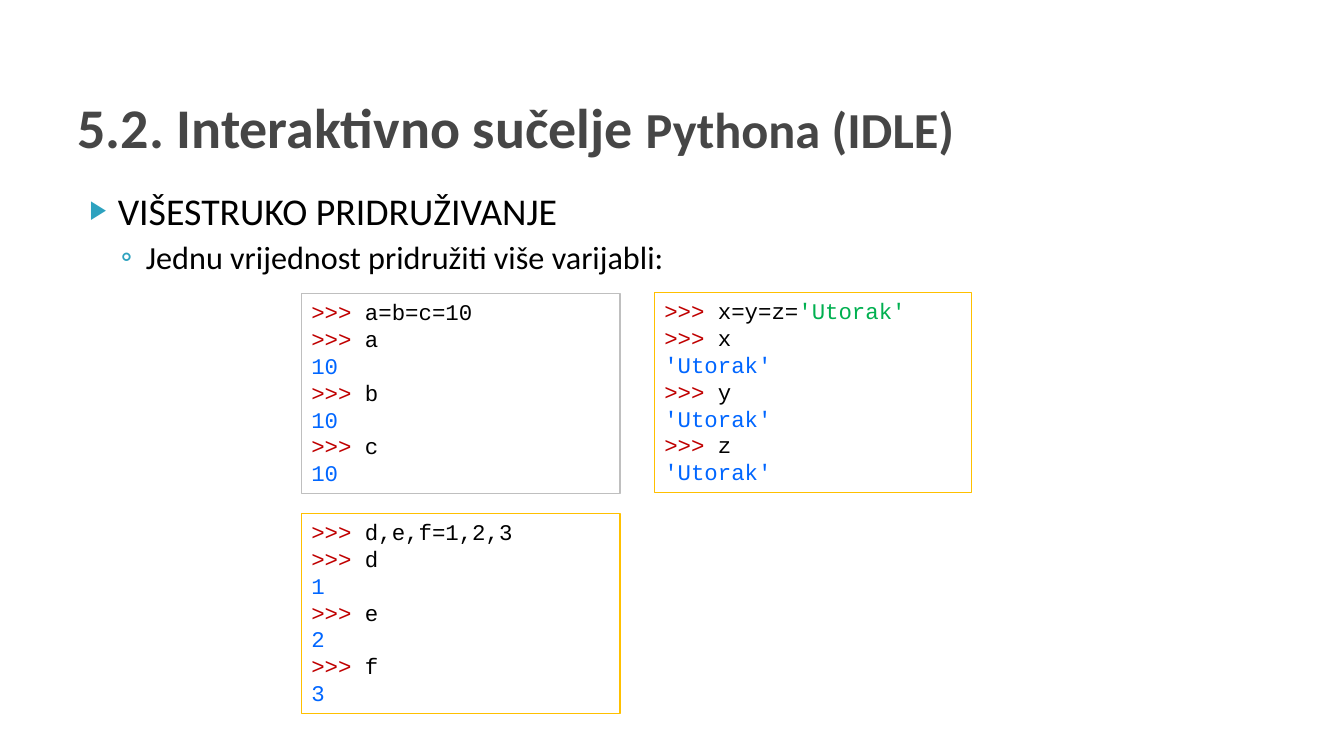
from dataclasses import dataclass

from lxml.etree import SubElement
from pptx import Presentation
from pptx.dml.color import RGBColor
from pptx.enum.shapes import MSO_SHAPE as Shape
from pptx.enum.text import MSO_ANCHOR as Anchor, PP_ALIGN as Align
from pptx.oxml.ns import qn
from pptx.util import Inches, Pt

GREY, BLACK, TEAL = "464646", "000000", "2DA2BF"
RED, BLUE, GREEN = "C00000", "0066FF", "00B050"
GOLD, SILVER = "FFC000", "BFBFBF"


@dataclass
class Point:
    text: str
    size: float
    level: int
    left: float
    hang: float
    before: float
    mark: str
    scale: int


@dataclass
class Panel:
    left: float
    top: float
    width: float
    edge: str
    code: str
    string: str
    echoes: list[tuple[str, str]]


POINTS = [
    Point("VIŠESTRUKO PRIDRUŽIVANJE", 27, 0, 0.4, 0.28, 0, "▶", 68),
    Point("Jednu vrijednost pridružiti više varijabli: ", 23, 1, 0.68, 0.25, 3.2, "◦", 100),
]
PANELS = [
    Panel(2.99, 2.91, 3.16, SILVER, "a=b=c=10", "", [(name, "10") for name in "abc"]),
    Panel(6.49, 2.9, 3.15, GOLD, "x=y=z=", "'Utorak'", [(name, "'Utorak'") for name in "xyz"]),
    Panel(2.99, 5.09, 3.16, GOLD, "d,e,f=1,2,3", "", list(zip("def", "123"))),
]


def color(code: str) -> RGBColor:
    return RGBColor.from_string(code)


def add_run(para, text: str, size: float, tint: str, face: str = "Calibri", bold: bool = False) -> None:
    run = para.add_run()
    run.text = text
    font = run.font
    font.name, font.size, font.bold = face, Pt(size), bold
    font.color.rgb = color(tint)


def next_para(frame, first: bool):
    return frame.paragraphs[0] if first else frame.add_paragraph()


def add_frame(slide, top: float, height: float):
    frame = slide.shapes.add_textbox(Inches(0.67), Inches(top), Inches(12), Inches(height)).text_frame
    frame.word_wrap = True
    return frame


def add_point(para, point: Point) -> None:
    para.level = point.level
    para.alignment = Align.JUSTIFY
    para.space_before = Pt(point.before)
    props = para._p.get_or_add_pPr()
    props.set("marL", str(Inches(point.left)))
    props.set("indent", str(-Inches(point.hang)))
    SubElement(SubElement(props, qn("a:buClr")), qn("a:srgbClr"), val=TEAL)
    SubElement(props, qn("a:buSzPct"), val=str(point.scale * 1000))
    SubElement(props, qn("a:buFont"), typeface="Calibri")
    SubElement(props, qn("a:buChar"), char=point.mark)
    add_run(para, point.text, point.size, BLACK)


def add_panel(slide, panel: Panel) -> None:
    box = slide.shapes.add_shape(
        Shape.RECTANGLE, Inches(panel.left), Inches(panel.top), Inches(panel.width), Inches(1.99))
    box.shadow.inherit = False
    box.fill.background()
    box.line.color.rgb = color(panel.edge)
    box.line.width = Pt(0.75)
    frame = box.text_frame
    frame.word_wrap = True
    frame.vertical_anchor = Anchor.TOP

    # Each prompt line, followed by the value it echoes
    lines = [[(">>> ", RED), (panel.code, BLACK)]]
    if panel.string:
        lines[0].append((panel.string, GREEN))
    for name, value in panel.echoes:
        lines += [[(">>> ", RED), (name, BLACK)], [(value, BLUE)]]
    for row, line in enumerate(lines):
        para = next_para(frame, row == 0)
        para.alignment = Align.LEFT
        para.line_spacing = Pt(19.2)
        for text, tint in line:
            add_run(para, text, 16, tint, "Courier New")


def main() -> None:
    deck = Presentation()
    deck.slide_width, deck.slide_height = Inches(13.33), Inches(7.5)
    slide = deck.slides.add_slide(deck.slide_layouts[6])

    # Title
    title = add_frame(slide, 0.69, 1.12)
    title.vertical_anchor = Anchor.MIDDLE
    add_run(title.paragraphs[0], "5.2. Interaktivno sučelje ", 40, GREY, bold=True)
    add_run(title.paragraphs[0], "Pythona (IDLE)", 36, GREY, bold=True)

    # Bullet points
    body = add_frame(slide, 1.81, 5.02)
    for row, point in enumerate(POINTS):
        add_point(next_para(body, row == 0), point)

    # Code panels
    for panel in PANELS:
        add_panel(slide, panel)

    deck.save("out.pptx")


if __name__ == "__main__":
    main()
